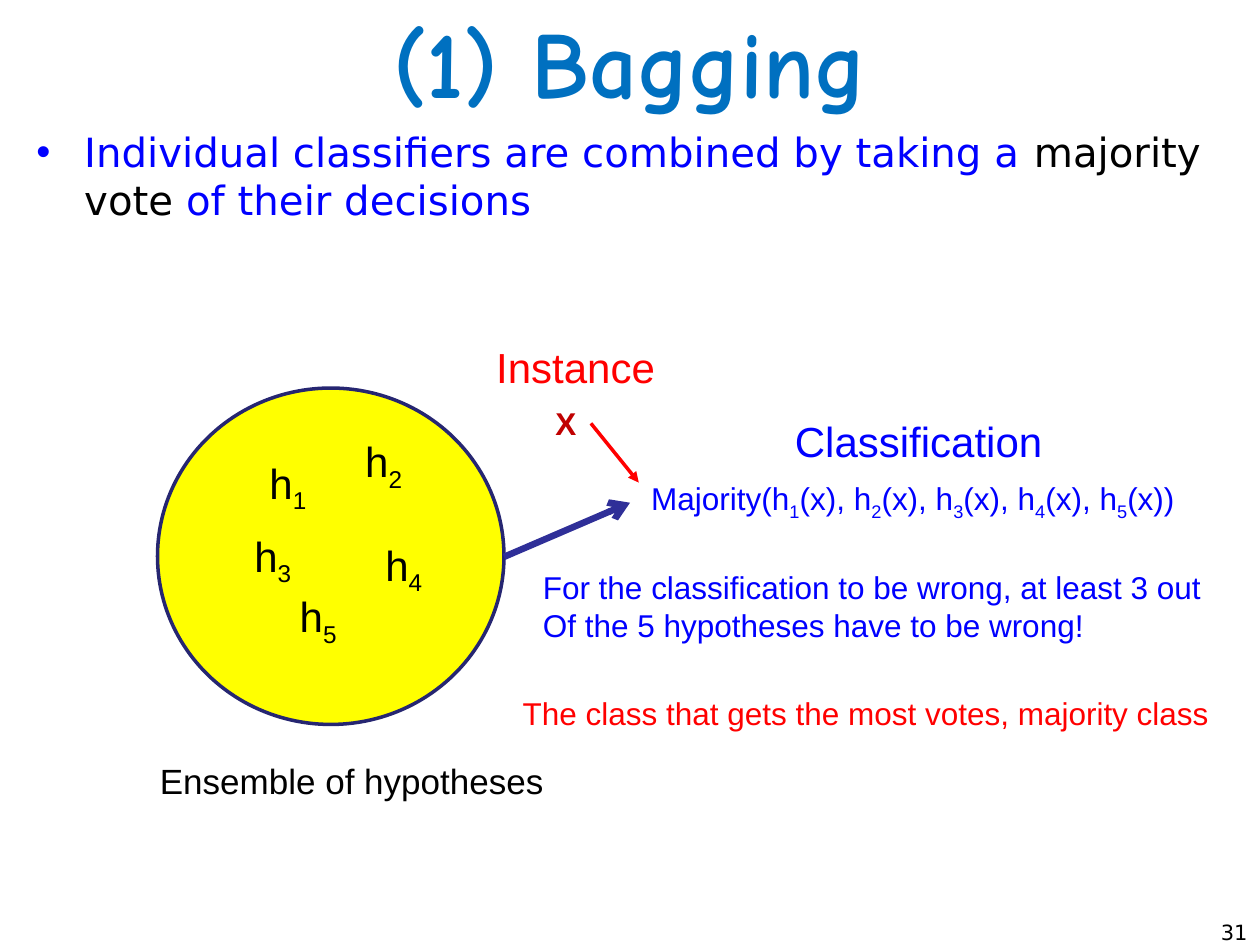
"""Build the Bagging slide: an ensemble of hypotheses voting on a class."""
from lxml import etree
from pptx import Presentation
from pptx.dml.color import RGBColor
from pptx.enum.shapes import MSO_CONNECTOR, MSO_SHAPE
from pptx.enum.text import MSO_ANCHOR, MSO_AUTO_SIZE, PP_ALIGN
from pptx.oxml.ns import qn
from pptx.util import Inches, Pt

STRAIGHT = MSO_CONNECTOR.STRAIGHT
OVAL = MSO_SHAPE.OVAL
MIDDLE = MSO_ANCHOR.MIDDLE
FIT_SHAPE = MSO_AUTO_SIZE.SHAPE_TO_FIT_TEXT
NO_FIT = MSO_AUTO_SIZE.NONE
CENTER, RIGHT = PP_ALIGN.CENTER, PP_ALIGN.RIGHT

COLORS = {
    "title": "0070C0", "blue": "0000FF", "black": "000000", "red": "FF0000",
    "dark red": "C00000", "yellow": "FFFF00", "outline": "262671", "arrow": "2F2F98",
}


def color(name):
    return RGBColor.from_string(COLORS[name])


def style(run, font_name, size, color_name, bold=False):
    run.font.name = font_name
    run.font.size = Pt(size)
    run.font.color.rgb = color(color_name)
    run.font.bold = bold


presentation = Presentation()
presentation.slide_width = Inches(10)
presentation.slide_height = Inches(7.5)
slide = presentation.slides.add_slide(presentation.slide_layouts[5])
shapes = slide.shapes

title = shapes.title
title.left, title.top, title.width, title.height = 0, 0, Inches(10), Inches(0.96)
title.text_frame.text = "(1) Bagging"
title.text_frame.auto_size = NO_FIT
title.text_frame.vertical_anchor = MIDDLE
title.text_frame.paragraphs[0].alignment = CENTER
style(title.text_frame.paragraphs[0].runs[0], "Comic Neue", 54, "title", True)

body = shapes.add_textbox(Inches(0.19), Inches(0.96), Inches(9.75), Inches(1.04))
body.text_frame.word_wrap = True
paragraph = body.text_frame.paragraphs[0]
for text, color_name in (
    ("Individual classifiers are combined by taking a ", "blue"),
    ("majority vote", "black"),
    (" of their decisions", "blue"),
):
    run = paragraph.add_run()
    run.text = text
    style(run, "DejaVu Sans", 23, color_name)
properties = paragraph._p.get_or_add_pPr()
properties.set("marL", str(Inches(0.38)))
properties.set("indent", str(-Inches(0.38)))
etree.SubElement(properties, qn("a:buFont")).set("typeface", "Arial")
etree.SubElement(properties, qn("a:buChar")).set("char", "•")

number = shapes.add_textbox(Inches(9.38), Inches(7.25), Inches(0.62), Inches(0.25))
number.text_frame.word_wrap = True
number.text_frame.text = "31"
number.text_frame.paragraphs[0].alignment = RIGHT
style(number.text_frame.paragraphs[0].runs[0], "DejaVu Sans", 12, "black")

ensemble = shapes.add_shape(OVAL, Inches(1.25), Inches(3.08), Inches(2.75), Inches(2.67))
ensemble.shadow.inherit = False
ensemble.fill.solid()
ensemble.fill.fore_color.rgb = color("yellow")
ensemble.line.color.rgb = color("outline")
ensemble.line.width = Pt(2)

for start_x, start_y, end_x, end_y, color_name, width, head in (
    (4, 4.42, 5, 3.99, "arrow", 3.75, "arrow"),
    (4.69, 3.36, 5.07, 3.83, "red", 2, "triangle"),
):
    arrow = shapes.add_connector(
        STRAIGHT, Inches(start_x), Inches(start_y), Inches(end_x), Inches(end_y)
    )
    arrow.line.color.rgb = color(color_name)
    arrow.line.width = Pt(width)
    etree.SubElement(arrow.line._get_or_add_ln(), qn("a:tailEnd")).set("type", head)
    etree.SubElement(arrow._element.spPr, qn("a:effectLst"))

votes = ", ".join(f"h_{index}_(x)" for index in range(1, 6))
labels = [
    (2.04, 3.58, 0.51, 0.5, "h_1", 24, "black"),
    (2.8, 3.41, 0.51, 0.5, "h_2", 24, "black"),
    (1.92, 4.16, 0.51, 0.5, "h_3", 24, "black"),
    (2.96, 4.23, 0.51, 0.5, "h_4", 24, "black"),
    (2.28, 4.64, 0.51, 0.5, "h_5", 24, "black"),
    (1.17, 5.98, 3.27, 0.44, "Ensemble of hypotheses", 20, "black"),
    (5.07, 3.75, 4.45, 0.4, f"Majority({votes})", 18, "blue"),
    (3.84, 2.66, 1.47, 0.5, "Instance", 24, "red"),
    (4.31, 3.16, 0.37, 0.4, "X", 18, "dark red"),
    (6.21, 3.25, 2.19, 0.5, "Classification", 24, "blue"),
    (4.05, 5.46, 5.7, 0.4, "The class that gets the most votes, majority class", 18, "red"),
    (4.21, 4.46, 5.48, 0.71, "For the classification to be wrong, at least 3 out\n"
     "Of the 5 hypotheses have to be wrong!", 18, "blue"),
]
for left, top, width, height, text, size, color_name in labels:
    label = shapes.add_textbox(Inches(left), Inches(top), Inches(width), Inches(height))
    label.text_frame.word_wrap = False
    label.text_frame.auto_size = FIT_SHAPE
    label.text_frame.text = "\n" * text.count("\n")
    for paragraph, line in zip(label.text_frame.paragraphs, text.split("\n")):
        for position, part in enumerate(line.split("_")):
            run = paragraph.add_run()
            run.text = part
            style(run, "Arial", size, color_name, text == "X")
            if position % 2:
                run._r.get_or_add_rPr().set("baseline", "-25000")

presentation.save("out.pptx")
